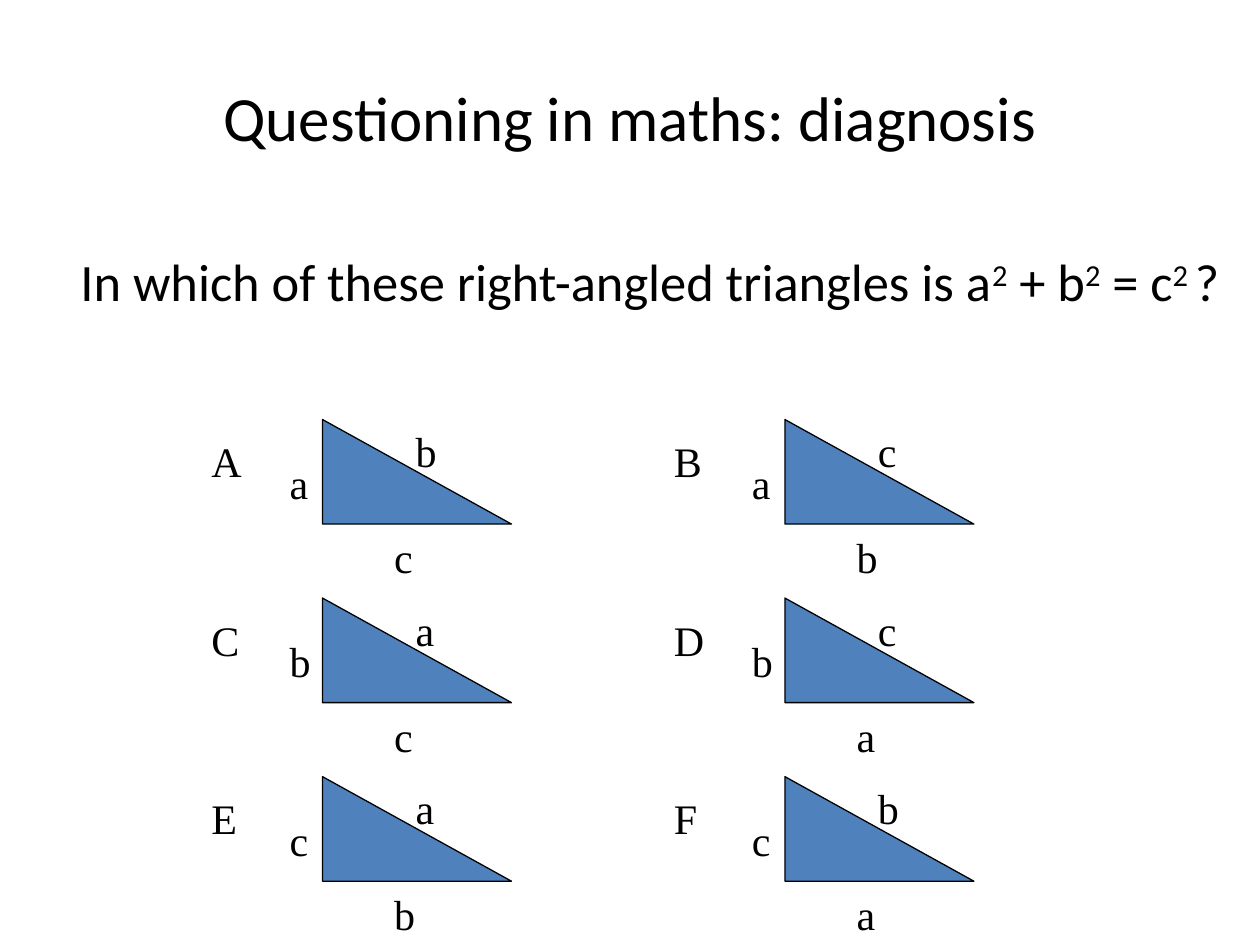
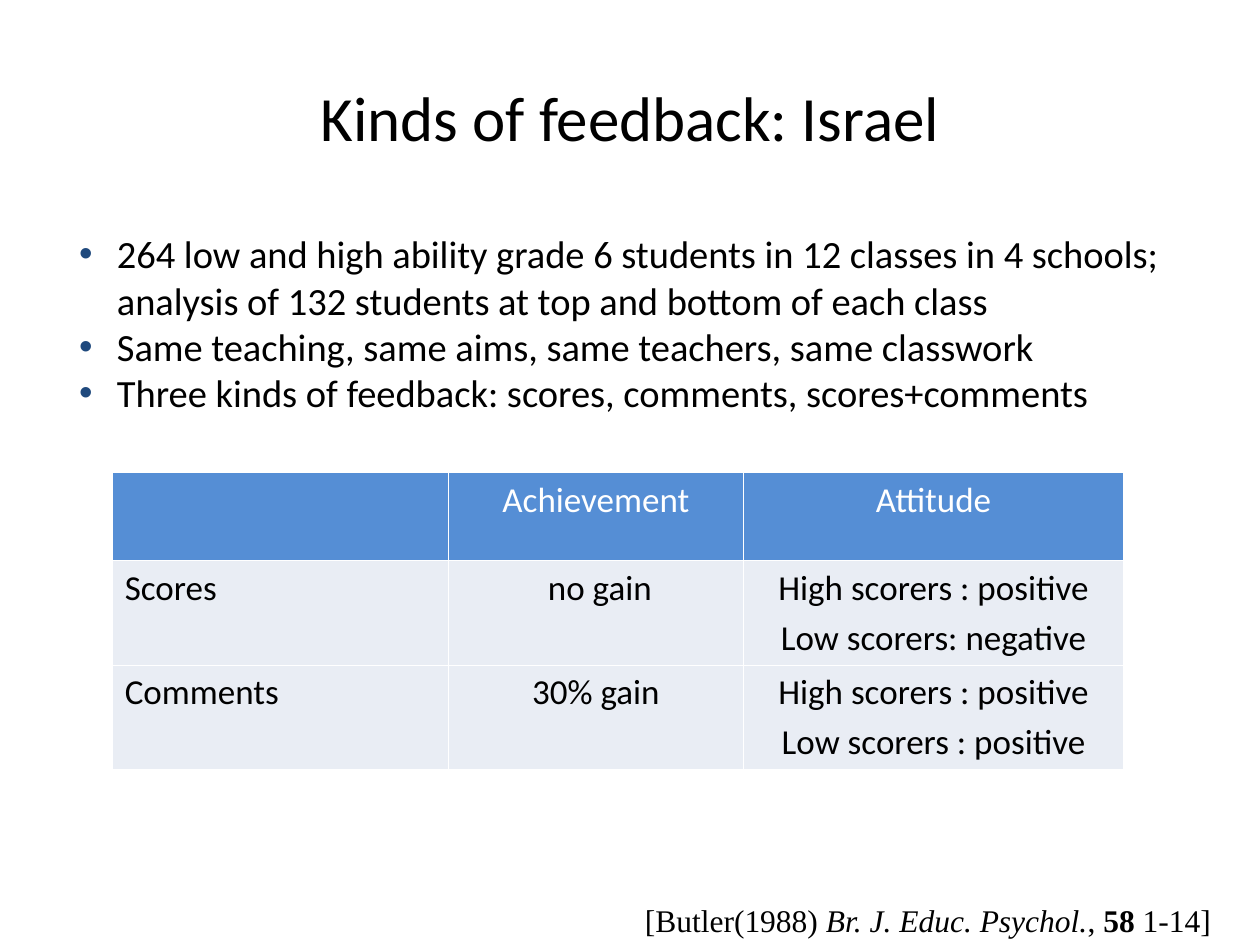
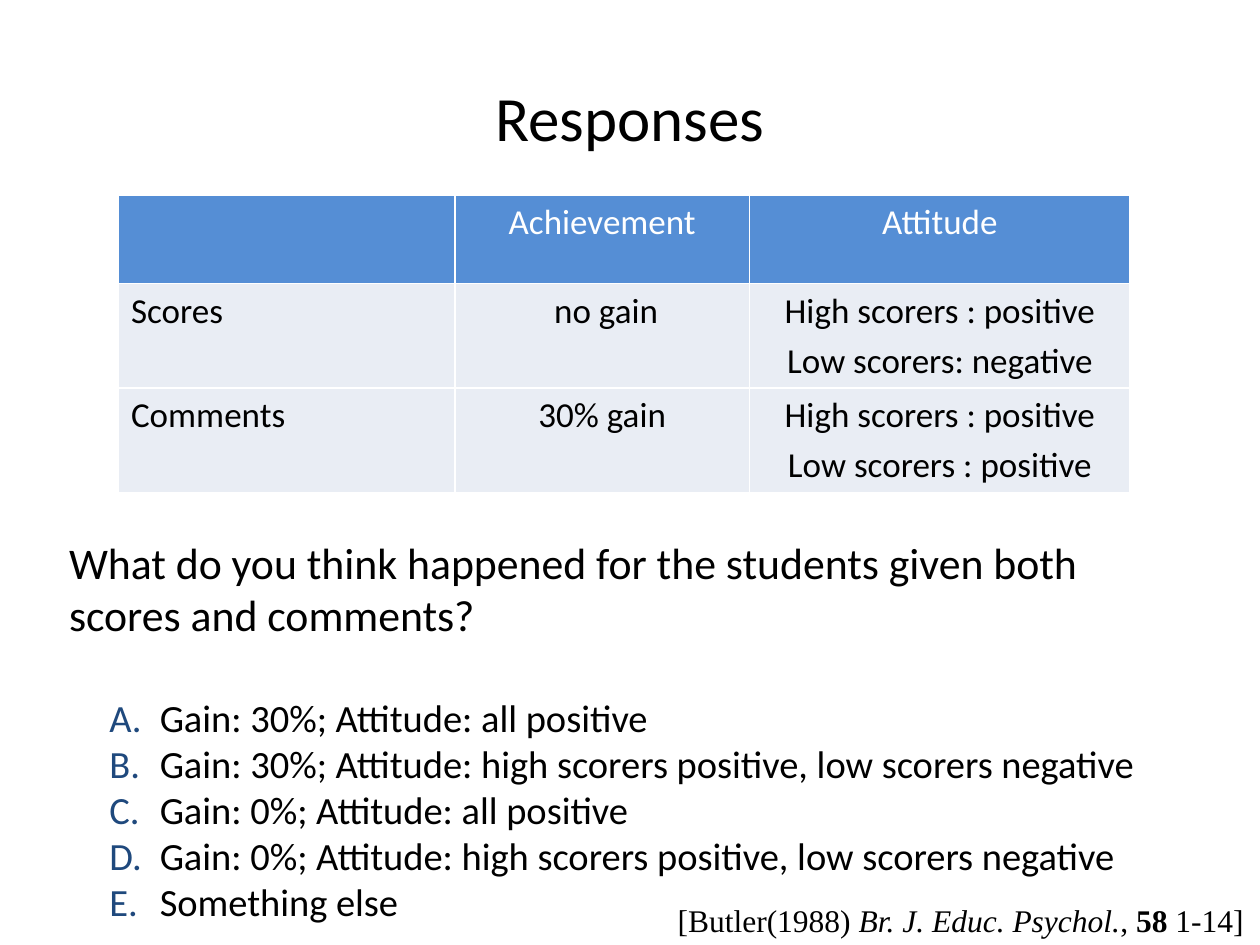
from lxml.etree import SubElement
from pptx import Presentation
from pptx.dml.color import RGBColor
from pptx.enum.shapes import MSO_SHAPE
from pptx.enum.text import MSO_ANCHOR, PP_ALIGN
from pptx.oxml.ns import qn
from pptx.util import Inches, Pt

COLOURS = {
    "text": "000000", "bullet": "1F497D", "triangle": "4F81BD",
    "header": "558ED5", "cell": "E9EDF4", "white": "FFFFFF",
}
SANS, SERIF = "Calibri", "Times New Roman"
SLIDE_WIDTH, SLIDE_HEIGHT = 10, 7.5
TITLE_BOX = (0.5, 0.3, 9, 1.25)

# Label, then the letters on the upright, base and sloping sides
TRIANGLES = [
    ("A", "a", "c", "b"), ("B", "a", "b", "c"),
    ("C", "b", "c", "a"), ("D", "b", "a", "c"),
    ("E", "c", "b", "a"), ("F", "c", "a", "b"),
]
TRIANGLE_GRID = (1.58, 3.33)
TRIANGLE_STEP = (3.67, 1.417)
LABEL_OFFSETS = [(0, 0.08), (0.62, 0.25), (1.45, 0.84), (1.62, 0)]

RESULTS = [
    ("", "Achievement", "Attitude"),
    ("Scores", " no gain", "High scorers : positive\nLow scorers: negative"),
    ("Comments", "30% gain", "High scorers : positive\nLow scorers : positive"),
]
RESULT_COLUMNS = (2.67, 2.34, 3.02)
RESULT_ROWS = (0.7, 0.83, 0.83)


def colour(name):
    return RGBColor.from_string(COLOURS[name])


def style(paragraph, size, face=SANS, ink="text", align=PP_ALIGN.LEFT):
    paragraph.font.size = Pt(size)
    paragraph.font.name = face
    paragraph.font.color.rgb = colour(ink)
    paragraph.alignment = align


def text_frame(shapes, box, wrap=True):
    frame = shapes.add_textbox(*map(Inches, box)).text_frame
    frame.word_wrap = wrap
    return frame


def add_line(frame, text, size, first=False, **options):
    paragraph = frame.paragraphs[0] if first else frame.add_paragraph()
    paragraph.text = text
    style(paragraph, size, **options)
    return paragraph


def add_marker(paragraph, tag, margin, indent, **attributes):
    """Hang the paragraph behind a coloured bullet or number."""
    properties = paragraph._p.get_or_add_pPr()
    properties.set("marL", str(Inches(margin)))
    properties.set("indent", str(Inches(indent)))
    marker_colour = SubElement(properties, qn("a:buClr"))
    SubElement(marker_colour, qn("a:srgbClr"), val=COLOURS["bullet"])
    if tag == "a:buChar":
        SubElement(properties, qn("a:buFont"), typeface="Arial")
    SubElement(properties, qn(tag), **attributes)


def titled_slide(deck, title):
    slide = deck.slides.add_slide(deck.slide_layouts[6])
    frame = text_frame(slide.shapes, TITLE_BOX)
    frame.vertical_anchor = MSO_ANCHOR.MIDDLE
    add_line(frame, title, 36, first=True, align=PP_ALIGN.CENTER)
    return slide


def add_citation(slide, left):
    frame = text_frame(slide.shapes, (left, 7.1, 4.72, 0.4), wrap=False)
    paragraph = frame.paragraphs[0]
    style(paragraph, 18, SERIF)
    for text, italic, bold in [
        ("[Butler(1988) ", False, False), ("Br. J. Educ. Psychol.", True, False),
        (", ", False, False), ("58", False, True), (" 1-14]", False, False),
    ]:
        run = paragraph.add_run()
        run.text = text
        run.font.italic, run.font.bold = italic, bold


def add_borders(cell):
    """Draw thin white lines on all four sides; call before filling the cell."""
    properties = cell._tc.get_or_add_tcPr()
    for side in ("a:lnL", "a:lnR", "a:lnT", "a:lnB"):
        line = SubElement(properties, qn(side), w=str(Pt(1)))
        fill = SubElement(line, qn("a:solidFill"))
        SubElement(fill, qn("a:srgbClr"), val=COLOURS["white"])


def add_results(slide, left, top):
    box = (left, top, sum(RESULT_COLUMNS), sum(RESULT_ROWS))
    table = slide.shapes.add_table(
        len(RESULT_ROWS), len(RESULT_COLUMNS), *map(Inches, box)).table
    for column, width in zip(table.columns, RESULT_COLUMNS):
        column.width = Inches(width)
    for row, height in zip(table.rows, RESULT_ROWS):
        row.height = Inches(height)
    for r, entries in enumerate(RESULTS):
        for c, entry in enumerate(entries):
            cell = table.cell(r, c)
            add_borders(cell)
            cell.fill.solid()
            cell.fill.fore_color.rgb = colour("cell" if r else "header")
            cell.text = entry
            for paragraph in cell.text_frame.paragraphs:
                style(paragraph, 20, ink="text" if r else "white",
                      align=PP_ALIGN.CENTER if c else PP_ALIGN.LEFT)
                paragraph.font.bold = False
                paragraph.space_before = Pt(4)


def add_triangle(slide, left, top, letters):
    shapes = slide.shapes.add_group_shape().shapes
    triangle = shapes.add_shape(
        MSO_SHAPE.RIGHT_TRIANGLE, *map(Inches, (left + 0.98, top, 1.5, 0.83)))
    triangle.shadow.inherit = False
    triangle.fill.solid()
    triangle.fill.fore_color.rgb = colour("triangle")
    triangle.line.color.rgb = colour("text")
    triangle.line.width = Pt(0.75)
    for letter, (dx, dy) in zip(letters, LABEL_OFFSETS):
        frame = text_frame(shapes, (left + dx, top + dy, 0.5, 0.5))
        add_line(frame, letter, 24, first=True, face=SERIF)


def diagnosis_slide(deck):
    slide = titled_slide(deck, "Questioning in maths: diagnosis")
    question = text_frame(slide.shapes, (0.54, 1.93, 9.46, 0.61)).paragraphs[0]
    style(question, 30)
    parts = ["In which of these right-angled triangles is a", "2",
             " + b", "2", " = c", "2 ", "?"]
    for i, part in enumerate(parts):
        run = question.add_run()
        run.text = part
        if i % 2:
            run._r.get_or_add_rPr().set("baseline", "30000")
    for i, letters in enumerate(TRIANGLES):
        row, column = divmod(i, 2)
        add_triangle(slide, TRIANGLE_GRID[0] + column * TRIANGLE_STEP[0],
                     TRIANGLE_GRID[1] + row * TRIANGLE_STEP[1], letters)


def feedback_slide(deck):
    slide = titled_slide(deck, "Kinds of feedback: Israel")
    frame = text_frame(slide.shapes, (0.53, 1.78, 9.14, 1.52))
    for i, point in enumerate([
        "264 low and high ability grade 6 students in 12 classes in 4 schools; "
        "analysis of 132 students at top and bottom of each class",
        "Same teaching, same aims, same teachers, same classwork",
        "Three kinds of feedback: scores, comments, scores+comments",
    ]):
        paragraph = add_line(frame, point, 22, first=i == 0)
        add_marker(paragraph, "a:buChar", 0.3, -0.3, char="•")
    add_citation(slide, 5.02)
    add_results(slide, 0.89, 3.75)


def responses_slide(deck):
    slide = titled_slide(deck, "Responses")
    add_citation(slide, 5.28)
    frame = text_frame(slide.shapes, (0.45, 4.2, 9.14, 3.3))
    question = add_line(frame, "What do you think happened for the students "
                        "given both scores and comments?", 25, first=True)
    question.space_after = Pt(30.5)
    for option in [
        "Gain: 30%; Attitude: all positive",
        "Gain: 30%; Attitude: high scorers positive, low scorers negative",
        "Gain: 0%; Attitude: all positive",
        "Gain: 0%; Attitude: high scorers positive, low scorers negative",
        "Something else",
    ]:
        paragraph = add_line(frame, option, 22)
        paragraph.level = 1
        add_marker(paragraph, "a:buAutoNum", 0.72, -0.4, type="alphaUcPeriod")
    add_results(slide, 0.94, 1.55)


def main():
    deck = Presentation()
    deck.slide_width, deck.slide_height = Inches(SLIDE_WIDTH), Inches(SLIDE_HEIGHT)
    diagnosis_slide(deck)
    feedback_slide(deck)
    responses_slide(deck)
    deck.save("out.pptx")


if __name__ == "__main__":
    main()
